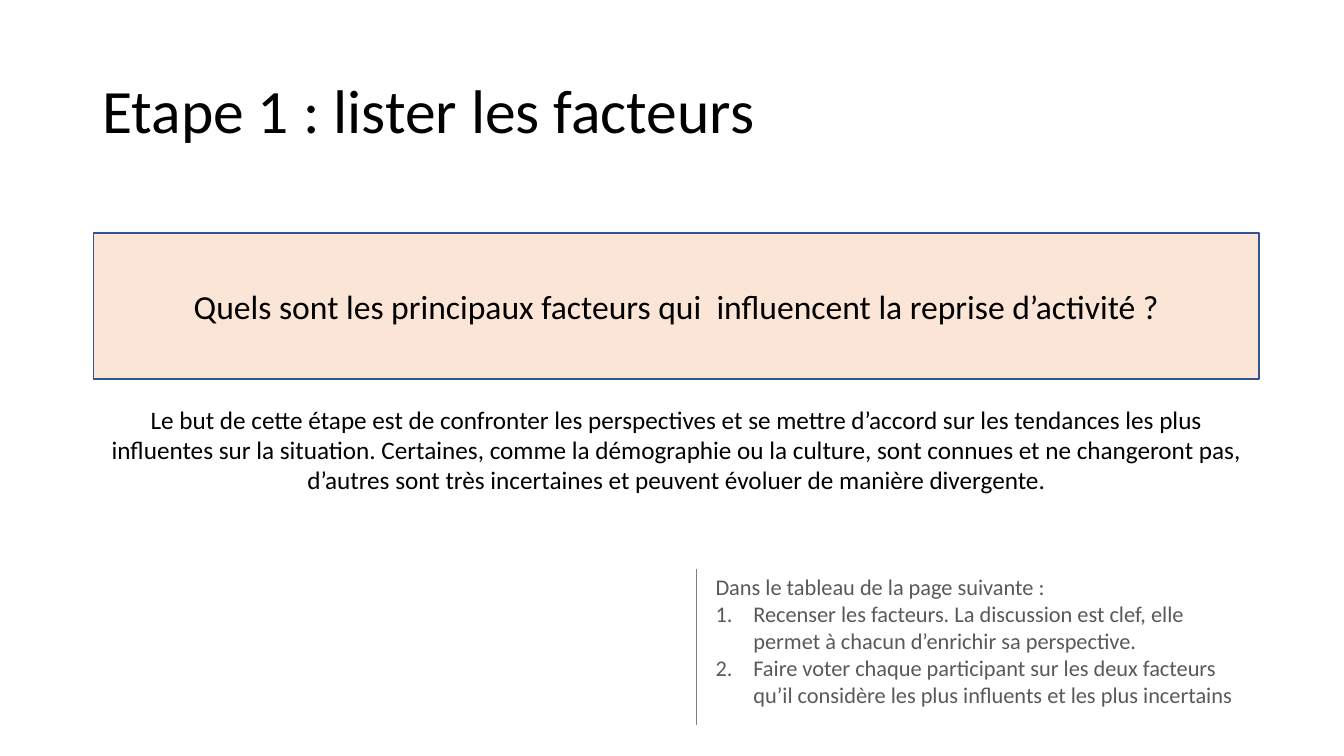
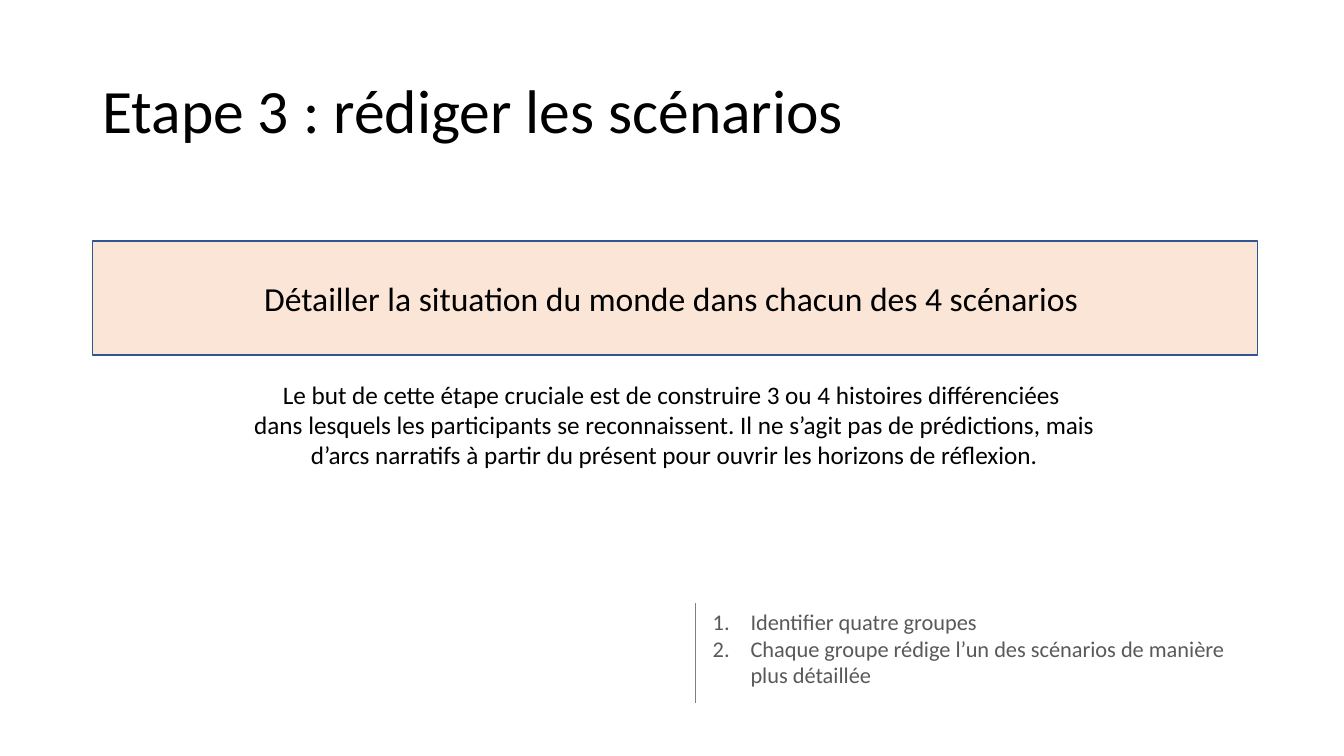
from pptx import Presentation
from pptx.dml.color import RGBColor
from pptx.enum.shapes import MSO_CONNECTOR, MSO_SHAPE
from pptx.enum.text import MSO_ANCHOR, PP_ALIGN
from pptx.oxml.ns import qn
from pptx.util import Pt
from lxml.etree import SubElement

FONT = "Calibri"
BLACK, GREY, RULE = "000000", "595959", "808080"
PEACH, BLUE = "FBE5D6", "325491"
NUMBER_INDENT = 27

# Content of each step; boxes are left, top, width, height in points
steps = [
    {
        "title": "Etape 1 : lister les facteurs",
        "question": "Quels sont les principaux facteurs qui  influencent la reprise d’activité ?",
        "question_box": (67, 166.3, 832.3, 104.4),
        "purpose": "Le but de cette étape est de confronter les perspectives et se mettre d’accord "
                   "sur les tendances les plus influentes sur la situation. Certaines, comme la "
                   "démographie ou la culture, sont connues et ne changeront pas, d’autres sont "
                   "très incertaines et peuvent évoluer de manière divergente.",
        "purpose_box": (66, 285.1, 834.5, 72.7),
        "intro": ["Dans le tableau de la page suivante :"],
        "tasks": ["Recenser les facteurs. La discussion est clef, elle permet à chacun "
                  "d’enrichir sa perspective.",
                  "Faire voter chaque participant sur les deux facteurs qu’il considère les "
                  "plus influents et les plus incertains"],
        "tasks_box": (504, 406.1, 385.2, 104.4),
        "rule": (497.5, 406.1, 517.7),
    },
    {
        "title": "Etape 3 : rédiger les scénarios",
        "question": "Détailler la situation du monde dans chacun des 4 scénarios ",
        "question_box": (66, 172.1, 832.3, 81.4),
        "purpose": "Le but de cette étape cruciale est de construire 3 ou 4 histoires différenciées \n"
                   "dans lesquels les participants se reconnaissent. Il ne s’agit pas de "
                   "prédictions, mais d’arcs narratifs à partir du présent pour ouvrir les "
                   "horizons de réflexion.",
        "purpose_box": (154.1, 267.1, 655.2, 72.7),
        "intro": [],
        "tasks": ["Identifier quatre groupes",
                  "Chaque groupe rédige l’un des scénarios de manière plus détaillée"],
        "tasks_box": (502, 430.6, 403.9, 65.5),
        "rule": (496.5, 430.6, 501.8),
    },
]


def color(hex_code):
    return RGBColor.from_string(hex_code)


def write(shape, plain, numbered=(), size=18, ink=BLACK, align=PP_ALIGN.LEFT,
          anchor=MSO_ANCHOR.TOP, line_spacing=None):
    frame = shape.text_frame
    frame.word_wrap = True
    frame.vertical_anchor = anchor
    for index, line in enumerate([*plain, *numbered]):
        paragraph = frame.add_paragraph() if index else frame.paragraphs[0]
        paragraph.text = line
        paragraph.alignment = align
        paragraph.line_spacing = line_spacing
        for run in paragraph.runs:
            run.font.name = FONT
            run.font.size = Pt(size)
            run.font.color.rgb = color(ink)
        if index >= len(plain):
            properties = paragraph._p.get_or_add_pPr()
            properties.set("marL", str(Pt(NUMBER_INDENT)))
            properties.set("indent", str(-Pt(NUMBER_INDENT)))
            SubElement(properties, qn("a:buFont"), typeface="+mj-lt")
            SubElement(properties, qn("a:buAutoNum"), type="arabicPeriod")


deck = Presentation()
deck.slide_width, deck.slide_height = Pt(960), Pt(540)

for step in steps:
    slide = deck.slides.add_slide(deck.slide_layouts[6])
    shapes = slide.shapes

    # Title
    title = shapes.add_textbox(Pt(66), Pt(28.8), Pt(828), Pt(104.4))
    write(title, [step["title"]], size=44, anchor=MSO_ANCHOR.MIDDLE, line_spacing=0.9)

    # Numbered tasks
    tasks = shapes.add_textbox(*map(Pt, step["tasks_box"]))
    write(tasks, step["intro"], numbered=step["tasks"], size=16, ink=GREY)

    # Question band
    question = shapes.add_shape(MSO_SHAPE.RECTANGLE, *map(Pt, step["question_box"]))
    question.shadow.inherit = False
    question.fill.solid()
    question.fill.fore_color.rgb = color(PEACH)
    question.line.color.rgb = color(BLUE)
    question.line.width = Pt(1)
    write(question, [step["question"]], size=24, align=PP_ALIGN.CENTER,
          anchor=MSO_ANCHOR.MIDDLE)

    # Purpose of the step
    purpose = shapes.add_textbox(*map(Pt, step["purpose_box"]))
    write(purpose, [step["purpose"]], align=PP_ALIGN.CENTER)

    # Vertical rule beside the tasks
    x, top, bottom = map(Pt, step["rule"])
    rule = shapes.add_connector(MSO_CONNECTOR.STRAIGHT, x, top, x, bottom)
    rule.line.color.rgb = color(RULE)
    rule.line.width = Pt(0.5)
    SubElement(rule._element.spPr, qn("a:effectLst"))

deck.save("out.pptx")
